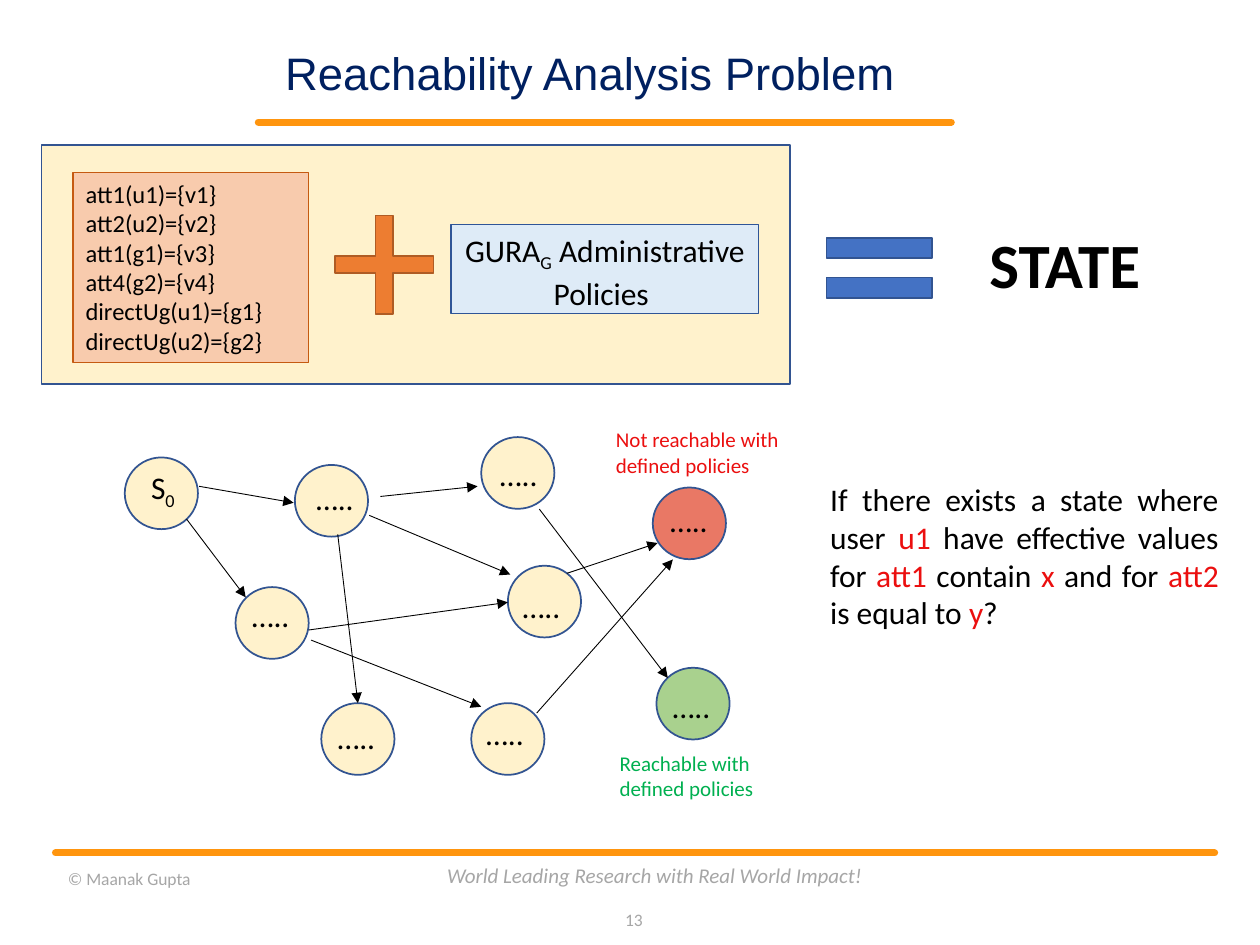
from pptx import Presentation
from pptx.dml.color import RGBColor
from pptx.enum.shapes import MSO_CONNECTOR, MSO_SHAPE as SHAPE
from pptx.enum.text import MSO_ANCHOR as ANCHOR, MSO_AUTO_SIZE, PP_ALIGN as ALIGN
from pptx.oxml.ns import qn
from pptx.util import Pt
from lxml.etree import SubElement

COLORS = {
    "black": "000000", "navy": "002060", "gray": "A6A6A6", "rule": "FF950E",
    "red": "EB0F0F", "green": "00B050", "cream": "FFF2CC", "outline": "325491",
    "peach": "F8CBAD", "rust": "C55A11", "orange": "ED7D31", "brown": "AF5C24",
    "sky": "DEEBF7", "steel": "2F5597", "blue": "4472C4",
    "goal": "A9D18E", "blocked": "E97865",
}
NODE_W, NODE_H = 41.8, 41
LABEL_W, LABEL_H = 41.8, 28.8
DOTS = "….."

ATTRIBUTES = ["att1(u1)={v1}", "att2(u2)={v2}", "att1(g1)={v3}",
              "att4(g2)={v4}", "directUg(u1)={g1}", "directUg(u2)={g2}"]
POLICIES = [[("GURA", ""), ("G", "sub"), (" Administrative ", "")], "Policies "]
QUESTION = [[
    ("If there exists a state where user ", "black"), ("u1", "red"),
    (" have effective values for ", "black"), ("att1", "red"),
    (" contain ", "black"), ("x", "red"), (" and for ", "black"),
    ("att2", "red"), (" is equal to ", "black"), ("y", "red"), ("?", "black"),
]]
START = [("S", ""), ("0", "sub")]

NODES = [
    (71.3, 261.4, "cream", 79.2, 264.2, START),
    (168.5, 265.7, "cream", 173.5, 270, DOTS),
    (134.6, 335.5, "cream", 136.8, 337, DOTS),
    (290.2, 323.3, "cream", 291.6, 331.9, DOTS),
    (269.3, 401.8, "cream", 270.7, 404.6, DOTS),
    (275, 249.8, "cream", 278.6, 256.3, DOTS),
    (375.1, 381.6, "goal", 377.3, 388.8, DOTS),
    (373, 278.6, "blocked", 375.8, 283, DOTS),
    (183.6, 401.8, "cream", 185.8, 406.8, DOTS),
]
ARROWS = [
    (113.8, 277.9, 167.8, 287.3), (106.6, 296.6, 140.4, 341.3),
    (211, 294.5, 291.6, 328.3), (193, 305.3, 204.5, 401.8),
    (176.4, 360, 290.2, 344.2), (177.8, 365.8, 275, 403.9),
    (306.7, 407.5, 384.5, 319.7), (308.2, 290.9, 381.6, 387.4),
    (217.4, 283.7, 272.9, 277.9), (324, 327.6, 375.8, 310.3),
]


def rgb(name):
    """Return the named colour."""
    return RGBColor.from_string(COLORS[name])


class Deck:
    """Holds the text style and the current slide."""

    def __init__(self, slide, font="Calibri"):
        """Start drawing on a slide."""
        self.slide, self.font = slide, font

    def set_text(self, sp, lines, size=18, color="black", align=ALIGN.LEFT,
                 anchor=ANCHOR.TOP, font=None, bold=False, italic=False,
                 wrap=True, grow=True):
        """Fill a shape with paragraphs of plain text or styled runs."""
        tf = sp.text_frame
        tf.word_wrap, tf.vertical_anchor = wrap, anchor
        tf.auto_size = MSO_AUTO_SIZE.SHAPE_TO_FIT_TEXT if grow else MSO_AUTO_SIZE.NONE
        for i, line in enumerate(lines):
            p = tf.add_paragraph() if i else tf.paragraphs[0]
            p.alignment = align
            p.font.name, p.font.size = font or self.font, Pt(size)
            p.font.bold, p.font.italic = bold, italic
            p.font.color.rgb = rgb(color)
            for text, style in [(line, "")] if isinstance(line, str) else line:
                r = p.add_run()
                r.text = text
                if style == "sub":
                    r.font._element.set("baseline", "-25000")
                elif style:
                    r.font.color.rgb = rgb(style)

    def title(self, text, x, y, w, h):
        """Place and format the title placeholder."""
        sp = self.slide.shapes.title
        sp.left, sp.top, sp.width, sp.height = Pt(x), Pt(y), Pt(w), Pt(h)
        self.set_text(sp, [text], 26, "navy", ALIGN.CENTER, ANCHOR.BOTTOM,
                      font="Arial", grow=False)
        sp.text_frame.paragraphs[0].line_spacing = 0.9

    def text(self, lines, x, y, w, h, **style):
        """Add a text box."""
        sp = self.slide.shapes.add_textbox(Pt(x), Pt(y), Pt(w), Pt(h))
        self.set_text(sp, lines, **style)

    def shape(self, kind, x, y, w, h, fill, line="outline", weight=1, adjust=()):
        """Add a filled, outlined preset shape."""
        sp = self.slide.shapes.add_shape(kind, Pt(x), Pt(y), Pt(w), Pt(h))
        sp.shadow.inherit = False
        sp.fill.solid()
        sp.fill.fore_color.rgb = rgb(fill)
        sp.line.color.rgb, sp.line.width = rgb(line), Pt(weight)
        for i, value in enumerate(adjust):
            sp.adjustments[i] = value
        return sp

    def line(self, x1, y1, x2, y2, color="black", weight=0.5, arrow=False):
        """Add a round-capped line or an arrow."""
        cx = self.slide.shapes.add_connector(
            MSO_CONNECTOR.STRAIGHT, Pt(x1), Pt(y1), Pt(x2), Pt(y2))
        cx.line.color.rgb, cx.line.width = rgb(color), Pt(weight)
        ln = cx.line._get_or_add_ln()
        if arrow:
            SubElement(ln, qn("a:tailEnd"), type="triangle")
        else:
            ln.set("cap", "rnd")
        SubElement(cx._element.spPr, qn("a:effectLst"))


def main():
    """Build and save the slide."""
    prs = Presentation()
    prs.slide_width, prs.slide_height = Pt(720), Pt(540)
    s = Deck(prs.slides.add_slide(prs.slide_layouts[5]))

    s.title("Reachability Analysis Problem", 143.3, 24.5, 388, 36.7)
    s.line(147.6, 69.8, 543.6, 69.8, "rule", 4)
    s.line(31.7, 487.4, 694.1, 487.4, "rule", 4)
    s.text(["© Maanak Gupta"], 31.7, 492.5, 133.9, 19.4, size=10, color="gray")
    s.text(["World Leading Research with Real World Impact!"],
           248.4, 489.6, 252, 21.6, size=12, color="gray", italic=True, wrap=False)
    s.text(["13"], 345.6, 511.2, 28.8, 28.8, size=10, color="gray",
           align=ALIGN.RIGHT, anchor=ANCHOR.MIDDLE, grow=False)

    s.shape(SHAPE.RECTANGLE, 23.8, 82.8, 427.7, 136.8, "cream")
    attributes = s.shape(SHAPE.RECTANGLE, 41.8, 98.6, 134.6, 108.7,
                         "peach", "rust", 0.75)
    s.set_text(attributes, ATTRIBUTES, 14)
    s.shape(SHAPE.CROSS, 191.5, 123.1, 56.2, 56.2, "orange", "brown", adjust=[0.411])
    policies = s.shape(SHAPE.RECTANGLE, 257.8, 128.2, 175.7, 51.1,
                       "sky", "steel", 0.75)
    s.set_text(policies, POLICIES, align=ALIGN.CENTER)
    s.shape(SHAPE.MATH_EQUAL, 461.5, 119.5, 82.1, 67, "blue", adjust=[0.172, 0.168])
    s.text(["STATE"], 520.6, 125.3, 175.7, 51.1, size=36, bold=True,
           align=ALIGN.CENTER)

    for x, y, fill, label_x, label_y, label in NODES:
        s.shape(SHAPE.OVAL, x, y, NODE_W, NODE_H, fill)
        s.text([label], label_x, label_y, LABEL_W, LABEL_H)
    for ends in ARROWS:
        s.line(*ends, arrow=True)

    s.text(QUESTION, 467.3, 270.7, 236.2, 94.3, align=ALIGN.JUSTIFY)
    s.text(["Not reachable with defined policies"], 344.9, 240.5, 113, 36,
           size=12, color="red")
    s.text(["Reachable with defined policies"], 347, 425.5, 113, 36,
           size=12, color="green")
    prs.save("out.pptx")


if __name__ == "__main__":
    main()
